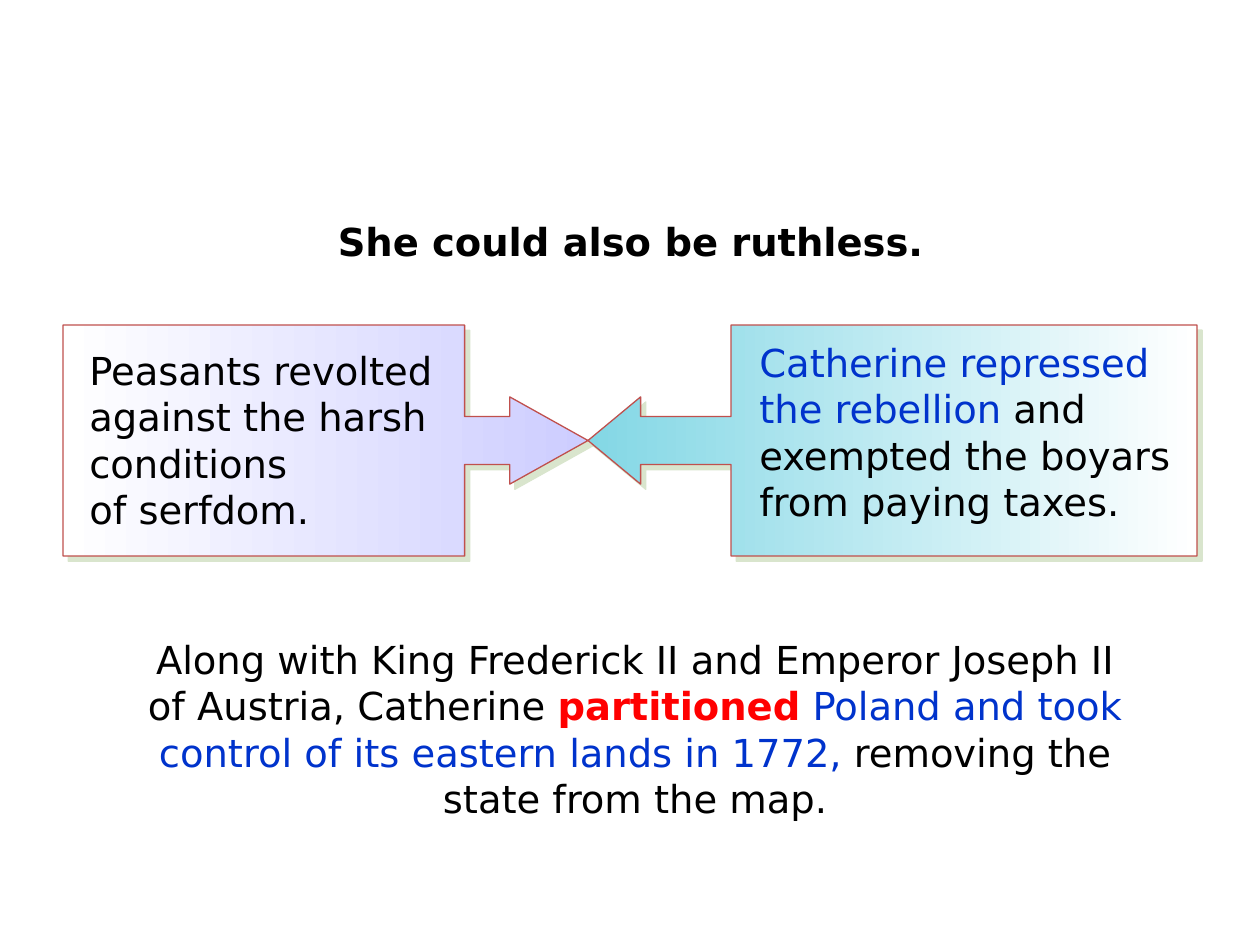
from pptx import Presentation
from pptx.dml.color import RGBColor
from pptx.enum.shapes import MSO_SHAPE
from pptx.enum.text import MSO_ANCHOR, MSO_AUTO_SIZE, PP_ALIGN
from pptx.oxml import parse_xml
from pptx.oxml.ns import nsdecls
from pptx.util import Emu, Pt

FONT = "DejaVu Sans"
BLACK = RGBColor(0x00, 0x00, 0x00)
BLUE = RGBColor(0x00, 0x33, 0xCC)
RED = RGBColor(0xFF, 0x00, 0x00)
WHITE = RGBColor(0xFF, 0xFF, 0xFF)
LILAC = RGBColor(0xCD, 0xCD, 0xFF)
AQUA = RGBColor(0x83, 0xD7, 0xE5)
BRICK = RGBColor(0xC0, 0x50, 0x4D)
SHADOW = RGBColor(0xAD, 0xC7, 0x93)


def px(n):
    """Turn slide pixels (126 to the inch) into EMU."""
    return Emu(round(n * 914400 / 126))


def add_run(p, text, color=BLACK, bold=False, size=22):
    """Add formatted text, with a line break at each newline."""
    for i, line in enumerate(text.split("\n")):
        if i:
            p.add_line_break()
        r = p.add_run()
        r.text = line
        r.font.name = FONT
        r.font.size = Pt(size)
        r.font.bold = bold
        r.font.color.rgb = color


def fill_text(sp, parts, align=PP_ALIGN.LEFT):
    """Fill a shape with one paragraph of (text, format) parts."""
    tf = sp.text_frame
    tf.word_wrap = True
    tf.auto_size = MSO_AUTO_SIZE.SHAPE_TO_FIT_TEXT
    tf.vertical_anchor = MSO_ANCHOR.TOP
    p = tf.paragraphs[0]
    p.alignment = align
    for text, style in parts:
        add_run(p, text, **style)


def add_text(shapes, x, y, w, h, parts, align=PP_ALIGN.LEFT):
    """Add a wrapped text box."""
    sp = shapes.add_textbox(px(x), px(y), px(w), px(h))
    fill_text(sp, parts, align)


def add_shadow(sp):
    """Give a shape a soft green shadow to the lower right."""
    sp.shadow.inherit = False
    effects = sp._element.spPr.find(
        "{http://schemas.openxmlformats.org/drawingml/2006/main}effectLst")
    effects.append(parse_xml(
        f'<a:outerShdw {nsdecls("a")} dist="{Pt(4.2)}" dir="2700000" '
        f'algn="ctr" rotWithShape="0"><a:srgbClr val="{SHADOW}">'
        '<a:alpha val="46000"/></a:srgbClr></a:outerShdw>'))


def add_callout(shapes, x, y, w, h, turn, head, color):
    """Add an arrow callout turned on its side that covers the given box."""
    left, top = x + (w - h) / 2, y + (h - w) / 2
    sp = shapes.add_shape(MSO_SHAPE.UP_ARROW_CALLOUT,
                          px(left), px(top), px(h), px(w))
    sp.rotation = turn
    for i, value in enumerate((0.208, 0.189, head, 0.765)):
        sp.adjustments[i] = value
    sp.fill.gradient()
    sp.fill.gradient_angle = 270
    for stop, position, rgb in zip(sp.fill.gradient_stops, (0, 1), (color, WHITE)):
        stop.position = position
        stop.color.rgb = rgb
    sp.line.color.rgb = BRICK
    sp.line.width = Pt(0.75)
    add_shadow(sp)


def add_title(s, x, y, w, h, text):
    """Place and format the title placeholder."""
    sp = s.shapes.title
    sp.left, sp.top, sp.width, sp.height = px(x), px(y), px(w), px(h)
    fill_text(sp, [(text, {"bold": True})], PP_ALIGN.CENTER)


def main():
    """Build the slide and save it."""
    prs = Presentation()
    prs.slide_width, prs.slide_height = px(1260), px(945)
    s = prs.slides.add_slide(prs.slide_layouts[5])

    add_callout(s.shapes, 63, 325, 525, 231, 90, 0.339, LILAC)
    add_text(s.shapes, 77, 341, 478, 198, [
        ("Peasants revolted \nagainst the harsh \nconditions \nof serfdom.", {})])

    response = s.shapes.add_group_shape().shapes
    add_callout(response, 588, 325, 609, 231, 270, 0.228, AQUA)
    add_text(response, 747, 333, 437, 198, [
        ("Catherine repressed the rebellion", {"color": BLUE}),
        (" and exempted the boyars from paying taxes.", {})])

    add_title(s, 116, 212, 1029, 59, "She could also be ruthless.")
    add_text(s.shapes, 126, 630, 1018, 198, [
        ("Along with King Frederick II and Emperor Joseph II of Austria, "
         "Catherine ", {}),
        ("partitioned", {"color": RED, "bold": True}),
        (" Poland and took control of its eastern lands in 1772,",
         {"color": BLUE}),
        (" removing the state from the map.", {})], PP_ALIGN.CENTER)

    prs.save("out.pptx")


if __name__ == "__main__":
    main()
